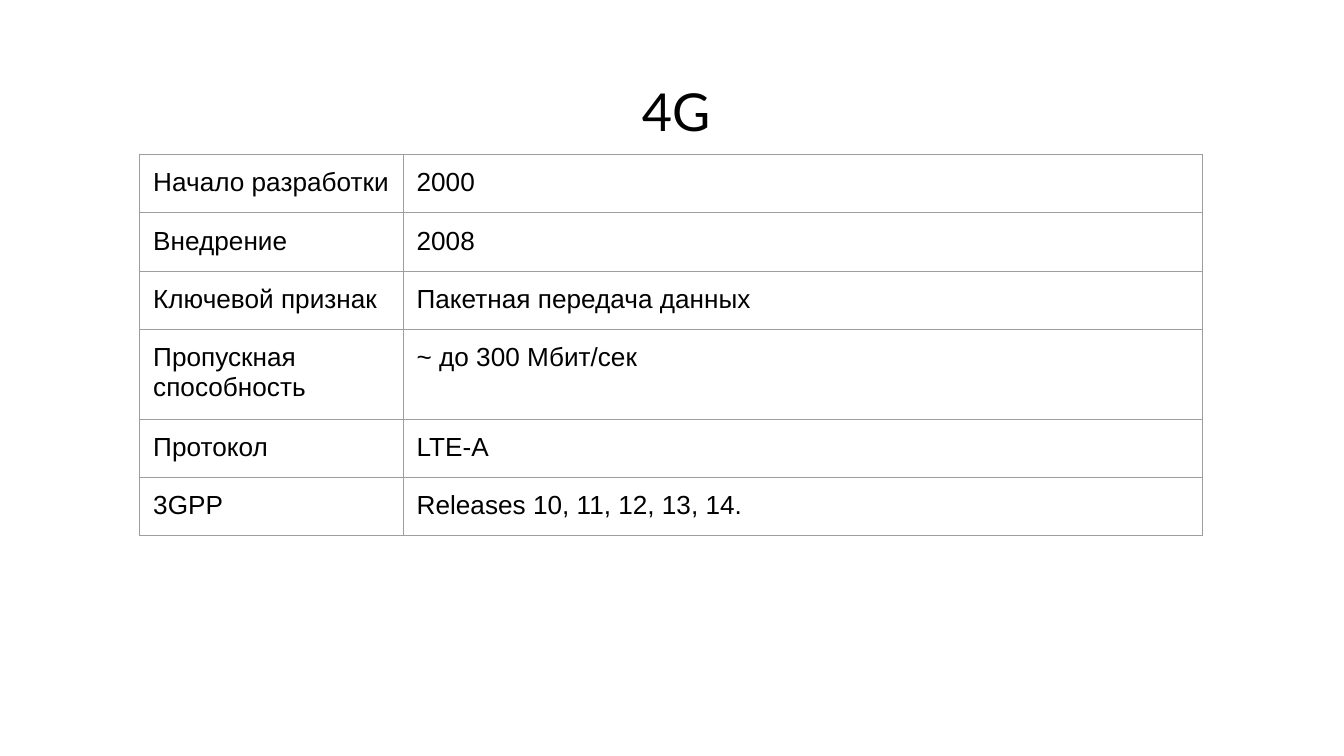
from lxml.etree import SubElement
from pptx import Presentation
from pptx.dml.color import RGBColor
from pptx.enum.text import MSO_ANCHOR as Anchor, PP_ALIGN as Align
from pptx.oxml.ns import qn
from pptx.util import Inches, Pt

ROWS = [
    ("Начало разработки", "2000"),
    ("Внедрение", "2008"),
    ("Ключевой признак", "Пакетная передача данных"),
    ("Пропускная способность", "~ до 300 Мбит/сек"),
    ("Протокол", "LTE-A"),
    ("3GPP", "Releases 10, 11, 12, 13, 14."),
]
COL_WIDTHS = (1.96, 5.95)
ROW_HEIGHT = 0.42
FRAME_SIZE = Inches(3.28)
MARGINS = {f"margin_{side}": Inches(0.1) for side in ("left", "right", "top", "bottom")}
TITLE_FONT = {"name": "Lato", "size": Pt(28)}
CELL_FONT = {"name": "Arial", "size": Pt(14), "bold": False}


def color(hex_value):
    return RGBColor.from_string(hex_value)


def set_attrs(obj, values):
    for name, value in values.items():
        setattr(obj, name, value)


def write(tf, text, font, align=Align.LEFT):
    p = tf.paragraphs[0]
    p.alignment = align
    r = p.add_run()
    r.text = text
    set_attrs(r.font, font)
    r.font.color.rgb = color("000000")


def add_title(slide, text):
    sp = slide.shapes.add_textbox(Inches(0.4), Inches(0.49), Inches(9.26), Inches(0.63))
    tf = sp.text_frame
    set_attrs(tf, {**MARGINS, "word_wrap": True, "vertical_anchor": Anchor.TOP})
    write(tf, text, TITLE_FONT, Align.CENTER)


def set_borders(cell, hex_value, width):
    tc_pr = cell._tc.get_or_add_tcPr()
    for i, side in enumerate(("lnL", "lnR", "lnT", "lnB")):
        ln = tc_pr.makeelement(qn(f"a:{side}"), {"w": str(width)})
        fill = SubElement(ln, qn("a:solidFill"))
        SubElement(fill, qn("a:srgbClr"), val=hex_value)
        tc_pr.insert(i, ln)


def add_grid(slide, rows):
    frame = slide.shapes.add_table(
        len(rows), len(COL_WIDTHS), Inches(1.04), Inches(1.15), FRAME_SIZE, FRAME_SIZE)
    table = frame.table
    set_attrs(table, {"first_row": False, "horz_banding": False})
    for column, width in zip(table.columns, COL_WIDTHS):
        column.width = Inches(width)
    for row, texts in zip(table.rows, rows):
        row.height = Inches(ROW_HEIGHT)
        for cell, text in zip(row.cells, texts):
            set_attrs(cell, {**MARGINS, "vertical_anchor": Anchor.TOP})
            cell.fill.background()
            set_borders(cell, "9E9E9E", Pt(0.75))
            write(cell.text_frame, text, CELL_FONT)
    set_attrs(frame, {"width": FRAME_SIZE, "height": FRAME_SIZE})


def main():
    prs = Presentation()
    width = Inches(10)
    set_attrs(prs, {"slide_width": width, "slide_height": width * 9 // 16})
    slide = prs.slides.add_slide(prs.slide_layouts[6])
    add_title(slide, "4G")
    add_grid(slide, ROWS)
    prs.save("out.pptx")


if __name__ == "__main__":
    main()
